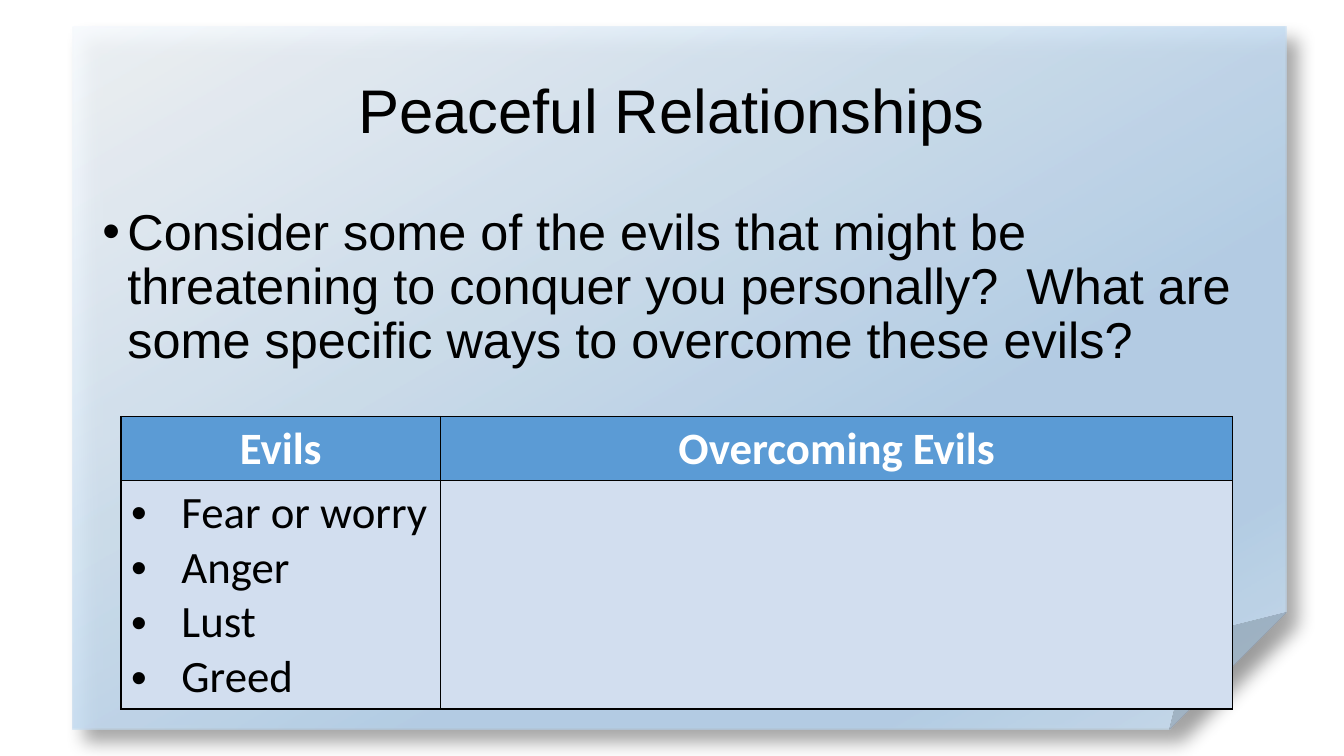
from lxml.etree import SubElement
from pptx import Presentation
from pptx.dml.color import RGBColor
from pptx.enum.shapes import MSO_SHAPE
from pptx.enum.text import MSO_ANCHOR, PP_ALIGN
from pptx.oxml.ns import qn
from pptx.util import Pt

BLACK = RGBColor(0x00, 0x00, 0x00)
WHITE = RGBColor(0xFF, 0xFF, 0xFF)
BLUE = RGBColor(0x5B, 0x9B, 0xD5)
PALE = RGBColor(0xD2, 0xDE, 0xEF)
MIST = RGBColor(0xF7, 0xFA, 0xFD)
SKY = RGBColor(0xB5, 0xD2, 0xEC)
HAZE = RGBColor(0xCE, 0xE1, 0xF2)

EVILS = ["Fear or worry", "Anger", "Lust", "Greed"]


def add_node(parent, tag, **attrs):
    return SubElement(parent, qn(tag), {k: str(v) for k, v in attrs.items()})


def add_tint(parent, color, alpha):
    """Add a colour with an opacity in percent."""
    tint = add_node(parent, "a:srgbClr", val=color)
    add_node(tint, "a:alpha", val=alpha * 1000)


class Board:
    """Holds the style and the current slide."""
    head_font = "Arial"
    cell_font = "Calibri"
    cell_size = 32

    def __init__(self, slide):
        self.slide = slide

    def paper(self, box, stops):
        """Draw the folded sheet with its gradient and shadow."""
        sheet = self.slide.shapes.add_shape(MSO_SHAPE.FOLDED_CORNER, *map(Pt, box))
        sheet.line.fill.background()
        sheet.fill.gradient()
        props = sheet._element.spPr
        grad = props.find(qn("a:gradFill"))
        for child in list(grad):
            grad.remove(child)
        ramp = add_node(grad, "a:gsLst")
        for place, color in stops:
            add_tint(add_node(ramp, "a:gs", pos=place * 1000), color, 87)
        add_node(grad, "a:lin", ang=60 * 60000, scaled=0)
        sheet.shadow.inherit = False
        shade = add_node(props.find(qn("a:effectLst")), "a:outerShdw",
                         blurRad=Pt(13), dist=Pt(13), dir=45 * 60000,
                         algn="tl", rotWithShape=0)
        add_tint(shade, BLACK, 40)

    def fill_para(self, para, text, font, size, color, bold=False, align=None, indent=0):
        """Fill a paragraph; an indent gives it a hanging bullet."""
        if indent:
            props = para._p.get_or_add_pPr()
            props.set("marL", str(Pt(indent)))
            props.set("indent", str(-Pt(indent)))
            add_node(props, "a:buFont", typeface="Arial")
            add_node(props, "a:buChar", char="•")
        if align is not None:
            para.alignment = align
        run = para.add_run()
        run.text = text
        run.font.name = font
        run.font.size = Pt(size)
        run.font.bold = bold
        run.font.color.rgb = color

    def text(self, box, text, size, anchor=MSO_ANCHOR.TOP, **style):
        frame = self.slide.shapes.add_textbox(*map(Pt, box)).text_frame
        frame.word_wrap = True
        frame.vertical_anchor = anchor
        para = frame.paragraphs[0]
        self.fill_para(para, text, self.head_font, size, BLACK, **style)
        para.line_spacing = 0.9

    def cell(self, cell, lines, fill, **style):
        props = cell._tc.get_or_add_tcPr()
        for side in "LRTB":
            edge = add_node(props, f"a:ln{side}", w=Pt(1))
            add_node(add_node(edge, "a:solidFill"), "a:srgbClr", val=BLACK)
        cell.fill.solid()
        cell.fill.fore_color.rgb = fill
        frame = cell.text_frame
        for i, line in enumerate(lines):
            para = frame.add_paragraph() if i else frame.paragraphs[0]
            self.fill_para(para, line, self.cell_font, self.cell_size, **style)

    def table(self, left, top, widths, heights, heads, lists):
        grid = self.slide.shapes.add_table(
            2, len(widths), Pt(left), Pt(top),
            Pt(sum(widths)), Pt(sum(heights))).table
        for row, height in zip(grid.rows, heights):
            row.height = Pt(height)
        for i, width in enumerate(widths):
            grid.columns[i].width = Pt(width)
            self.cell(grid.cell(0, i), [heads[i]], BLUE, color=WHITE,
                      bold=True, align=PP_ALIGN.CENTER)
            self.cell(grid.cell(1, i), lists[i], PALE, color=BLACK, indent=36)


def main():
    deck = Presentation()
    deck.slide_width, deck.slide_height = Pt(960), Pt(540)
    board = Board(deck.slides.add_slide(deck.slide_layouts[6]))
    board.paper((51.6, 19.4, 867.6, 501.8),
                [(0, MIST), (64, SKY), (83, SKY), (100, HAZE)])
    board.text((66, 28.8, 828, 104.4), "Peaceful Relationships", 44,
               MSO_ANCHOR.MIDDLE, align=PP_ALIGN.CENTER)
    board.text((66, 144, 828, 342.7),
               "Consider some of the evils that might be threatening to conquer "
               "you personally?  What are some specific ways to overcome these evils?",
               36, indent=18)
    board.table(86.4, 297.4, [228.4, 565.8], [46, 163],
                ["Evils", "Overcoming Evils"], [EVILS, []])
    deck.save("out.pptx")


if __name__ == "__main__":
    main()
